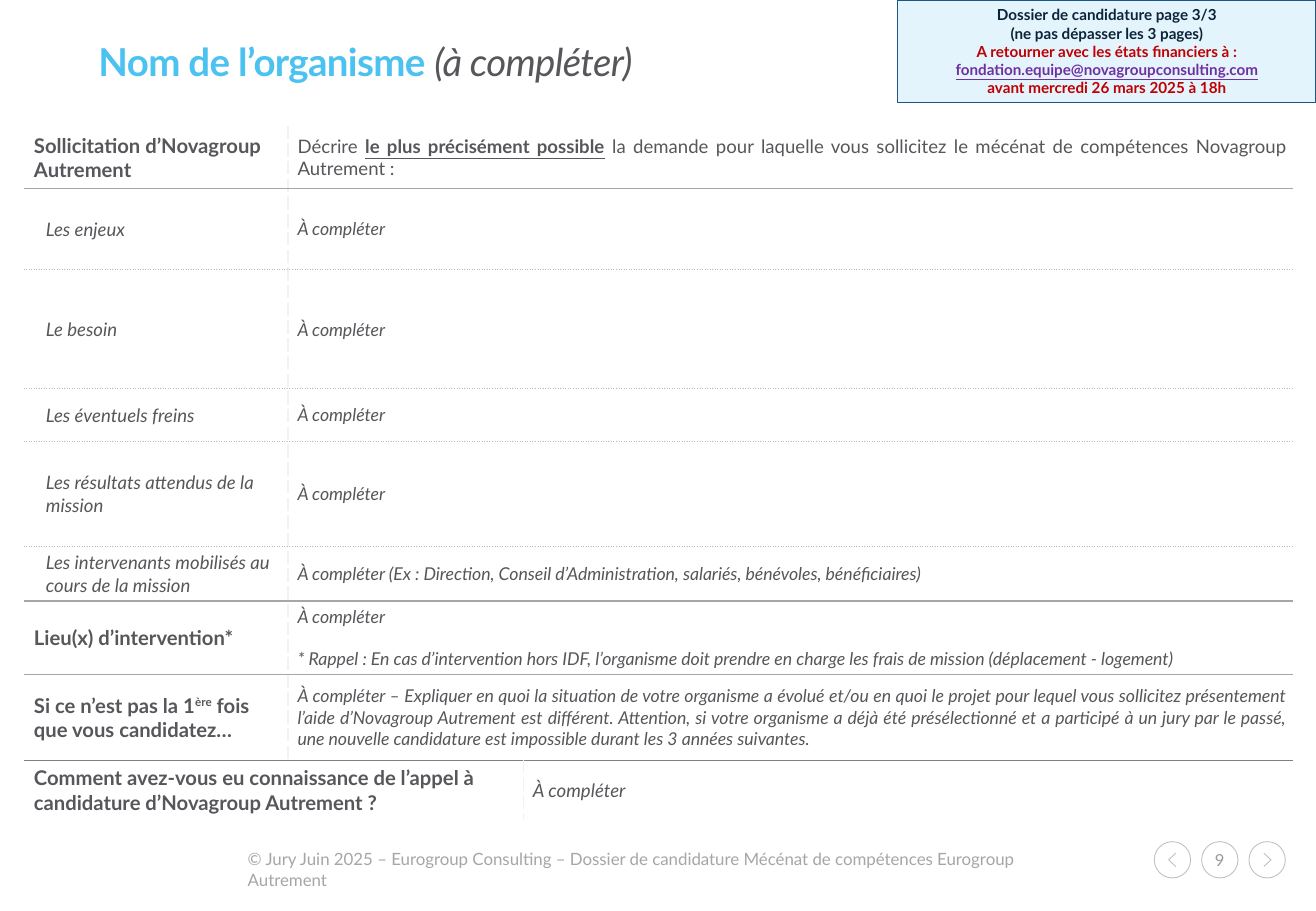
from lxml import etree
from pptx import Presentation
from pptx.dml.color import RGBColor
from pptx.enum.shapes import MSO_SHAPE
from pptx.enum.text import MSO_ANCHOR, PP_ALIGN
from pptx.oxml.ns import qn
from pptx.util import Cm, Pt

LEFT, MID, JUST = PP_ALIGN.LEFT, PP_ALIGN.CENTER, PP_ALIGN.JUSTIFY
TOP, CENTER = MSO_ANCHOR.TOP, MSO_ANCHOR.MIDDLE
OVAL, RECT = MSO_SHAPE.OVAL, MSO_SHAPE.RECTANGLE

FONT = "Lato"
COLORS = {
    "white": "FFFFFF", "text": "57565A", "title": "4CC2F1",
    "pale": "E3F4FD", "blue": "1C5686", "navy": "0C2437",
    "red": "C00000", "violet": "7030A0", "foot": "A6A6A6",
    "page": "9A9A9B", "ring": "BFBFBF", "rule": "A6A6A6",
    "dots": "BBBBBE", "dash": "F2F2F2", "base": "808080",
}
LINES = {
    "solid": ("rule", 1, "solid"),
    "dots": ("dots", 0.75, "sysDot"),
    "dash": ("dash", 1, "sysDash"),
    "base": ("base", 0.5, "solid"),
}


def rgb(name):
    return RGBColor.from_string(COLORS[name])


class Deck:
    def __init__(self, wide, high):
        self.prs = Presentation()
        self.prs.slide_width, self.prs.slide_height = Cm(wide), Cm(high)
        self.slide = self.prs.slides.add_slide(self.prs.slide_layouts[6])
        self.shapes = self.slide.shapes

    def run(self, par, text, size, color="text", marks="", track=0):
        run = par.add_run()
        run.text = text
        font = run.font
        font.name, font.size = FONT, Pt(size)
        font.color.rgb = rgb(color)
        font.bold, font.italic = "b" in marks, "i" in marks
        font.underline = "u" in marks
        props = run._r.get_or_add_rPr()
        if "s" in marks:
            props.set("baseline", "30000")
        if track:
            props.set("spc", str(track))

    def fill(self, frame, pars, align=LEFT, gap=0, indent=0):
        for num, runs in enumerate(pars):
            par = frame.add_paragraph() if num else frame.paragraphs[0]
            par.alignment = align
            if num and gap:
                par.space_before = Pt(gap)
            if indent:
                par._p.get_or_add_pPr().set("marL", str(Cm(indent)))
            for run in runs:
                self.run(par, *run)

    def text(self, area, pars, anchor=TOP, pad=None, lead=None):
        frame = self.shapes.add_textbox(*map(Cm, area)).text_frame
        frame.word_wrap = True
        frame.vertical_anchor = anchor
        if pad is not None:
            self.pad(frame, [pad] * 4)
        self.fill(frame, pars)
        if lead:
            frame.paragraphs[0].line_spacing = lead

    def pad(self, item, sizes):
        (item.margin_left, item.margin_top,
         item.margin_right, item.margin_bottom) = map(Cm, sizes)

    def style(self, shape, line, width, fill=None):
        shape.shadow.inherit = False
        shape.line.color.rgb = rgb(line)
        shape.line.width = Pt(width)
        if fill:
            shape.fill.solid()
            shape.fill.fore_color.rgb = rgb(fill)
        else:
            shape.fill.background()

    def shape(self, kind, area, line, width, fill=None, pars=(), pad=None):
        shape = self.shapes.add_shape(kind, *map(Cm, area))
        self.style(shape, line, width, fill)
        frame = shape.text_frame
        frame.vertical_anchor = CENTER
        if pad is not None:
            self.pad(frame, [pad] * 4)
        self.fill(frame, pars, MID)

    def arrow(self, x, y, side):
        pts = [(Cm(x + side * dx), Cm(y + dy))
               for dx, dy in ((-0.07, -0.14), (0.08, 0), (-0.07, 0.14))]
        path = self.shapes.build_freeform(*pts[0])
        path.add_line_segments(pts[1:], close=False)
        self.style(path.convert_to_shape(), "ring", 0.5)

    def border(self, cell, side, name):
        color, width, dash = LINES[name]
        props = cell._tc.get_or_add_tcPr()
        line = etree.SubElement(props, qn("a:ln" + side), w=str(Pt(width)))
        fill = etree.SubElement(line, qn("a:solidFill"))
        etree.SubElement(fill, qn("a:srgbClr"), val=COLORS[color])
        etree.SubElement(line, qn("a:prstDash"), val=dash)

    def table(self, x, y, cols, rows):
        area = (x, y, sum(cols), sum(row[0] for row in rows))
        grid = self.shapes.add_table(
            len(rows), len(cols), *map(Cm, area)).table
        grid.first_row = grid.horz_banding = False
        for col, width in zip(grid.columns, cols):
            col.width = Cm(width)
        above = None
        for r, (high, below, split, label, body, indent, align) in enumerate(rows):
            grid.rows[r].height = Cm(high)
            for c in range(len(cols)):
                cell = grid.cell(r, c)
                sides = (("L", "dash" if c == split else None),
                         ("R", "dash" if c == split - 1 else None),
                         ("T", above), ("B", below))
                for side, name in sides:
                    if name:
                        self.border(cell, side, name)
                cell.fill.solid()
                cell.fill.fore_color.rgb = rgb("white")
                cell.vertical_anchor = CENTER
                self.pad(cell, (0.2, 0.1, 0.1, 0.1))
            for first, last in ((0, split - 1), (split, len(cols) - 1)):
                if last > first:
                    grid.cell(r, first).merge(grid.cell(r, last))
            self.fill(grid.cell(r, 0).text_frame, [label], indent=indent)
            self.fill(grid.cell(r, split).text_frame, body, align, gap=12.5)
            above = below


def head(text):
    return [(text, 12, "text", "b")]


def note(text, size=10.5):
    return [(text, size, "text", "i")]


def topic(high, text, answer="À compléter", below="dots"):
    return (high, below, 1, note(text, 11), [note(answer)], 0.25, JUST)


def main():
    deck = Deck(27.51, 19.05)

    step, size, left, top = 0.99, 0.76, 24.13, 17.6
    for num, side in enumerate((-1, 0, 1)):
        x = left + num * step
        page = [] if side else [[("9", 9.8, "page")]]
        deck.shape(OVAL, (x, top, size, size), "ring", 0.5, pars=page, pad=0)
        if side:
            deck.arrow(x + size / 2, top + size / 2, side)

    deck.text((4.93, 17.63, 17.68, 0.69), [[(
        "© Jury Juin 2025 – Eurogroup Consulting – Dossier de candidature "
        "Mécénat de compétences Eurogroup Autrement", 10, "foot")]])
    deck.text((2.06, 0.89, 23.4, 0.94), [[
        ("Nom de l’organisme ", 22.8, "title", "b", -40),
        ("(à compléter)", 22.8, "text", "i", -40)]], CENTER, 0, 0.86)

    deck.table(0.51, 2.64, (5.51, 4.92, 16.07), [
        (1.3, "solid", 1, head("Sollicitation d’Novagroup Autrement"), [[
            ("Décrire ", 11),
            ("le plus précisément possible", 11, "text", "bu"),
            (" la demande pour laquelle vous sollicitez le mécénat de "
             "compétences Novagroup Autrement :", 11)]], 0, JUST),
        topic(1.7, "Les enjeux"),
        topic(2.49, "Le besoin"),
        topic(1.1, "Les éventuels freins"),
        topic(2.2, "Les résultats attendus de la mission"),
        topic(1.14, "Les intervenants mobilisés au cours de la mission",
              "À compléter (Ex : Direction, Conseil d’Administration, "
              "salariés, bénévoles, bénéficiaires)", "solid"),
        (1.52, "solid", 1, head("Lieu(x) d’intervention*"), [
            note("À compléter"),
            note("* Rappel : En cas d’intervention hors IDF, l’organisme doit "
                 "prendre en charge les frais de mission "
                 "(déplacement - logement)")], 0, JUST),
        (1.8, "base", 1, head("Si ce n’est pas la 1")
         + [("ère", 12, "text", "bs")] + head(" fois que vous candidatez…"), [
            note("À compléter – Expliquer en quoi la situation de votre "
                 "organisme a évolué et/ou en quoi le projet pour lequel vous "
                 "sollicitez présentement l’aide d’Novagroup Autrement est "
                 "différent. Attention, si votre organisme a déjà été "
                 "présélectionné et a participé à un jury par le passé, une "
                 "nouvelle candidature est impossible durant les 3 années "
                 "suivantes.")], 0, JUST),
        (1.24, None, 2, head("Comment avez-vous eu connaissance de l’appel à "
                             "candidature d’Novagroup Autrement ?"),
         [note("À compléter", 11)], 0, LEFT),
    ])

    notice = (
        ("Dossier de candidature page 3/3", "navy", "b"),
        ("(ne pas dépasser les 3 pages)", "navy", "b"),
        ("A retourner avec les états financiers à :", "red", "b"),
        ("fondation.equipe@novagroupconsulting.com", "violet", "bu"),
        ("avant mercredi 26 mars 2025 à 18h", "red", "b"),
    )
    deck.shape(RECT, (18.76, 0, 8.75, 2.15), "blue", 0.75, "pale",
               [[(text, 9, color, marks)] for text, color, marks in notice])

    deck.prs.save("out.pptx")


if __name__ == "__main__":
    main()
